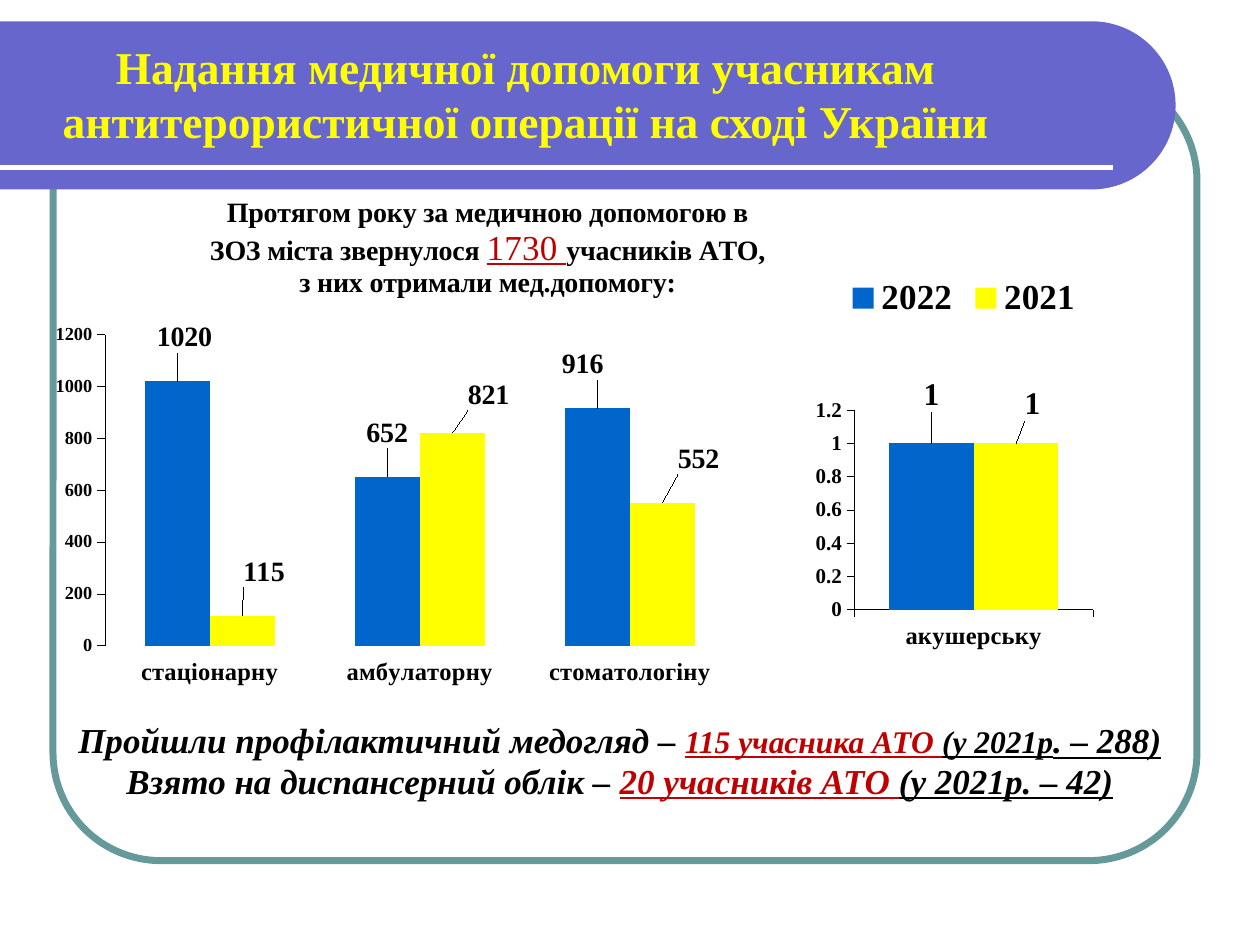
from collections import namedtuple
from math import cos, pi, sin

from lxml import etree
from pptx import Presentation
from pptx.chart.data import CategoryChartData
from pptx.dml.color import RGBColor
from pptx.enum.chart import XL_CHART_TYPE as ChartType
from pptx.enum.chart import XL_LABEL_POSITION as LabelPosition
from pptx.enum.chart import XL_LEGEND_POSITION as LegendPosition
from pptx.enum.chart import XL_TICK_LABEL_POSITION as TickLabels
from pptx.enum.chart import XL_TICK_MARK as TickMark
from pptx.enum.shapes import MSO_CONNECTOR, MSO_SHAPE
from pptx.enum.text import MSO_ANCHOR, PP_ALIGN
from pptx.oxml.ns import qn
from pptx.util import Cm, Pt

COLORS = {"teal": "669999", "violet": "6666CC", "white": "FFFFFF", "yellow": "FFFF00",
          "blue": "0066CC", "red": "C00000", "black": "000000"}
FONT = "Times New Roman"

Box = namedtuple("Box", "left top width height")


def color(name):
    return RGBColor.from_string(COLORS[name])


def style_font(font, size, color_name="black", bold=True):
    font.name, font.size, font.bold = FONT, Pt(size), bold
    font.color.rgb = color(color_name)


def style_line(line, color_name, width):
    line.color.rgb = color(color_name)
    line.width = Pt(width)


def add_text(slide, box, anchor):
    frame = slide.shapes.add_textbox(*map(Cm, box)).text_frame
    frame.word_wrap = True
    frame.vertical_anchor = anchor
    return frame


def add_frame(slide, box):
    shape = slide.shapes.add_shape(MSO_SHAPE.ROUNDED_RECTANGLE, *map(Cm, box))
    shape.adjustments[0] = 0.137
    shape.shadow.inherit = False
    shape.fill.background()
    style_line(shape.line, "teal", 4)


def add_banner(slide, box):
    """Band with a round right end, a white rule and the slide title."""
    radius = box.height / 2
    center_x, center_y = box.left + box.width - radius, box.top + radius
    steps = 60
    angles = [pi * step / steps - pi / 2 for step in range(steps + 1)]
    arc = [(Cm(center_x + radius * cos(a)), Cm(center_y + radius * sin(a))) for a in angles]
    builder = slide.shapes.build_freeform(Cm(box.left), Cm(box.top))
    builder.add_line_segments(arc + [(Cm(box.left), Cm(box.top + box.height))], close=True)
    band = builder.convert_to_shape()
    band.shadow.inherit = False
    band.fill.solid()
    band.fill.fore_color.rgb = color("violet")
    band.line.fill.background()

    rule_y = Cm(box.top + 2.95)
    rule = slide.shapes.add_connector(MSO_CONNECTOR.STRAIGHT, Cm(box.left), rule_y,
                                      Cm(box.left + 22.43), rule_y)
    style_line(rule.line, "white", 3)
    etree.SubElement(rule._element.spPr, qn("a:effectLst"))

    frame = add_text(slide, Box(box.left + 0.51, box.top + 0.18, 20.19, 2.54),
                     MSO_ANCHOR.MIDDLE)
    paragraph = frame.paragraphs[0]
    paragraph.text = "Надання медичної допомоги учасникам антитерористичної операції на сході України"
    paragraph.alignment = PP_ALIGN.CENTER
    style_font(paragraph.font, 26, "yellow")


def set_layout(parent, index, inner=False, **values):
    """Give a chart part a manual layout, as fractions of the chart."""
    for old in parent.findall(qn("c:layout")):
        parent.remove(old)
    layout = etree.Element(qn("c:layout"))
    manual = etree.SubElement(layout, qn("c:manualLayout"))
    if inner:
        etree.SubElement(manual, qn("c:layoutTarget")).set("val", "inner")
    if parent.tag != qn("c:dLbl"):
        for mode in ("xMode", "yMode"):
            etree.SubElement(manual, qn("c:" + mode)).set("val", "edge")
    for name, value in values.items():
        etree.SubElement(manual, qn("c:" + name)).set("val", str(value))
    parent.insert(index, layout)


def add_columns(slide, box, categories, series, gap, plot, maximum, step,
                axis_size, label_size, offsets):
    data = CategoryChartData()
    data.categories = categories
    for name, values in series:
        data.add_series(name, values)
    chart = slide.shapes.add_chart(ChartType.COLUMN_CLUSTERED, *map(Cm, box), data).chart
    chart.has_title = chart.has_legend = False
    style_font(chart.font, axis_size)
    set_layout(chart._chartSpace.chart.plotArea, 0, inner=True, **dict(zip("xywh", plot)))

    columns = chart.plots[0]
    columns.gap_width, columns.overlap = gap, 0
    columns.vary_by_categories = False
    for column, fill, moves in zip(columns.series, ("blue", "yellow"), offsets):
        column.format.fill.solid()
        column.format.fill.fore_color.rgb = color(fill)
        column.data_labels.show_value = True
        style_font(column.data_labels.font, label_size)
        for index, (x, y) in enumerate(moves):
            label = column.points[index].data_label
            style_font(label.font, label_size)
            label.position = LabelPosition.OUTSIDE_END
            set_layout(label._dLbl, 1, x=x, y=y)

    for axis, size in ((chart.category_axis, 14), (chart.value_axis, axis_size)):
        style_font(axis.tick_labels.font, size)
        axis.major_tick_mark = TickMark.OUTSIDE
        axis.has_major_gridlines = False
        style_line(axis.format.line, "black", 0.25)
    chart.category_axis.tick_label_position = TickLabels.LOW
    value_axis = chart.value_axis
    value_axis.minimum_scale, value_axis.maximum_scale = 0, maximum
    value_axis.major_unit = step
    return chart


def add_care_chart(slide, box):
    chart = add_columns(
        slide, box, ["стаціонарну", "амбулаторну", "стоматологіну"],
        [("Series 1", (1020, 652, 916)), ("Series 2", (115, 821, 552))],
        gap=122, plot=(0.07, 0.26, 0.87, 0.54), maximum=1200, step=200,
        axis_size=10.5, label_size=16,
        offsets=[[(0.01, -0.04), (0, -0.04), (-0.02, -0.04)],
                 [(0.03, -0.04), (0.05, -0.03), (0.05, -0.04)]])
    chart.category_axis.format.line.fill.background()
    chart.value_axis.tick_labels.number_format = "0"
    chart.value_axis.tick_labels.number_format_is_linked = False

    title = chart.chart_title
    lines = [["Протягом року за медичною допомогою в"],
             ["ЗОЗ міста звернулося ", "1730 ", "учасників АТО,"],
             ["з них отримали мед.допомогу:"]]
    frame = title.text_frame
    for index, texts in enumerate(lines):
        paragraph = frame.add_paragraph() if index else frame.paragraphs[0]
        paragraph.alignment = PP_ALIGN.CENTER
        style_font(paragraph.font, 16)
        for text in texts:
            run = paragraph.add_run()
            run.text = text
            style_font(run.font, 16)
            if text == "1730 ":
                style_font(run.font, 20, "red", bold=False)
                run.font.underline = True
    set_layout(title._element, 1, x=0.21, y=0.01)


def add_obstetric_chart(slide, box):
    chart = add_columns(
        slide, box, ["акушерську"], [("2022", (1,)), ("2021", (1,))],
        gap=82, plot=(0.17, 0.35, 0.73, 0.46), maximum=1.2, step=0.2,
        axis_size=12, label_size=18, offsets=[[(0, -0.06)], [(0.05, -0.04)]])
    chart.value_axis.has_major_gridlines = True
    style_line(chart.value_axis.major_gridlines.format.line, "white", 0.5)
    chart.has_legend = True
    legend = chart.legend
    legend.position = LegendPosition.TOP
    legend.include_in_layout = False
    style_font(legend.font, 20)
    set_layout(legend._element, 1, x=0.13, y=0.03)


def add_summary(slide, box):
    lines = [[("Пройшли профілактичний медогляд – ", 20, "black", False),
              ("115 учасника АТО ", 18, "red", True),
              ("(у 2021р", 18, "black", True), (". – 288)", 20, "black", True)],
             [("Взято на диспансерний облік – ", 20, "black", False),
              ("20 учасників АТО ", 20, "red", True),
              ("(у 2021р. – 42)", 20, "black", True)]]
    frame = add_text(slide, box, MSO_ANCHOR.TOP)
    for index, runs in enumerate(lines):
        paragraph = frame.add_paragraph() if index else frame.paragraphs[0]
        paragraph.alignment = PP_ALIGN.CENTER
        paragraph.line_spacing = 0.8
        paragraph.space_before = Pt(4)
        paragraph.font.italic = True
        for text, size, color_name, underline in runs:
            run = paragraph.add_run()
            run.text = text
            style_font(run.font, size, color_name)
            run.font.italic, run.font.underline = True, underline


def main():
    presentation = Presentation()
    presentation.slide_width, presentation.slide_height = Cm(25.4), Cm(19.05)
    slide = presentation.slides.add_slide(presentation.slide_layouts[6])
    add_frame(slide, Box(1.07, 1.47, 23.06, 15.88))
    add_banner(slide, Box(0, 0.43, 23.7, 3.39))
    add_care_chart(slide, Box(1.09, 3.73, 14.6, 11.61))
    add_summary(slide, Box(1.09, 14.53, 22.81, 2.39))
    add_obstetric_chart(slide, Box(16.1, 5.21, 6.6, 8.74))
    presentation.save("out.pptx")


if __name__ == "__main__":
    main()
